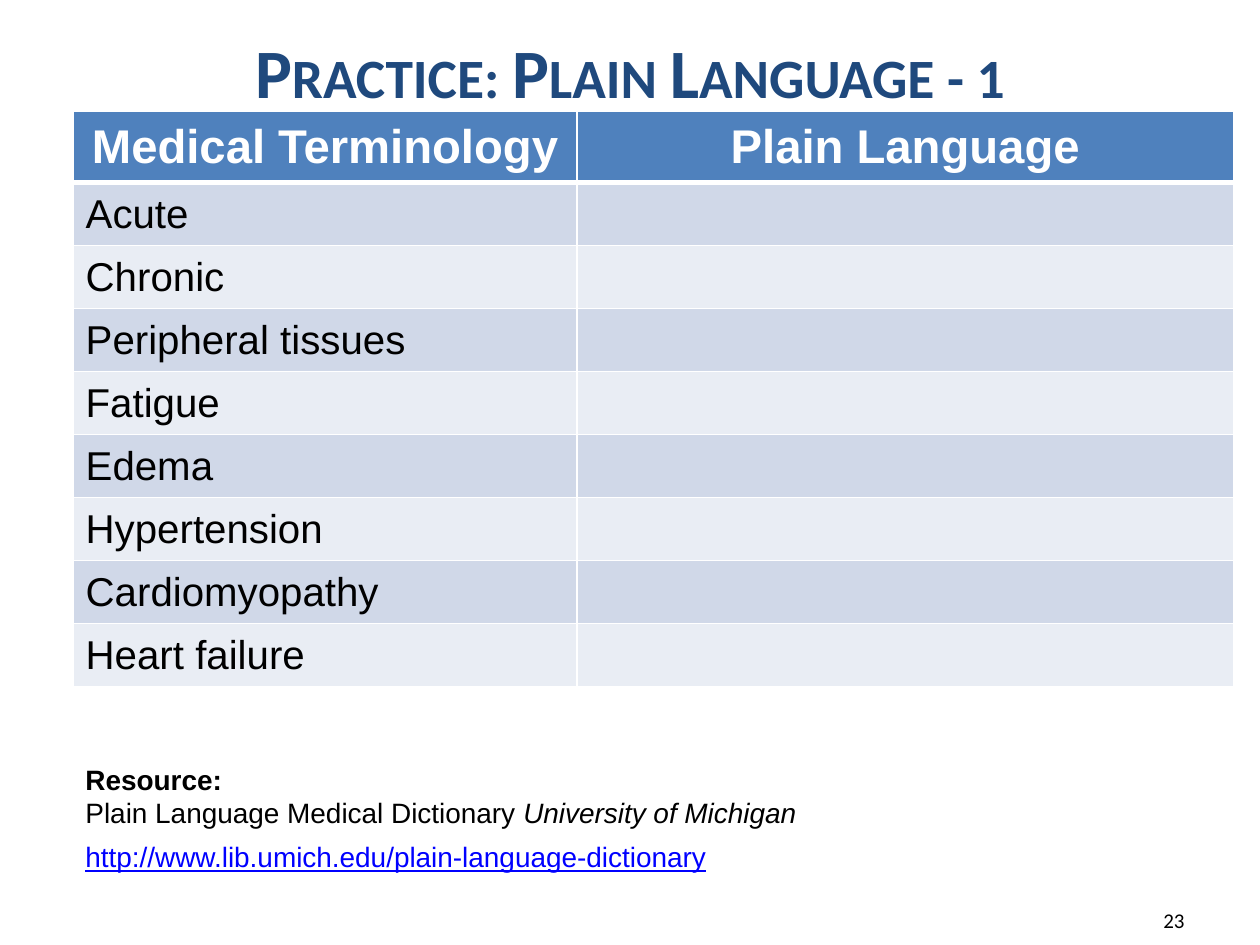
from lxml.etree import SubElement
from pptx import Presentation
from pptx.dml.color import RGBColor
from pptx.enum.text import MSO_ANCHOR as Anchor, PP_ALIGN as Align
from pptx.oxml.ns import qn
from pptx.util import Inches, Pt


def color(value):
    return RGBColor.from_string(value)


def write(paragraph, text, ink, **formats):
    run = paragraph.add_run()
    run.text = text
    run.font.color.rgb = color(ink)
    for key, value in formats.items():
        setattr(run.font, key, value)
    return run


prs = Presentation()
prs.slide_width, prs.slide_height = Inches(10), Inches(7.5)
slide = prs.slides.add_slide(prs.slide_layouts[6])

frames = []
for box, anchor, align in [
    ((0.5, 0.17, 9, 0.78), Anchor.MIDDLE, Align.CENTER),
    ((7.17, 7.1, 2.33, 0.4), Anchor.MIDDLE, Align.RIGHT),
    ((0.58, 6, 7.55, 1.38), Anchor.TOP, Align.LEFT),
]:
    frame = slide.shapes.add_textbox(*map(Inches, box)).text_frame
    frame.word_wrap = True
    frame.vertical_anchor = anchor
    frame.paragraphs[0].alignment = align
    frames.append(frame)
title, page_number, resource = frames

heading = write(title.paragraphs[0], "Practice: Plain Language - 1", "1F497D",
                name="Calibri", size=Pt(39.6), bold=True)
heading.font._element.set("cap", "small")
write(page_number.paragraphs[0], "23", "000000", name="Calibri", size=Pt(12))

terms = ["Acute", "Chronic", "Peripheral tissues", "Fatigue", "Edema",
         "Hypertension", "Cardiomyopathy", "Heart failure"]
rows = [("Medical Terminology", "Plain Language")] + [(term, "") for term in terms]
glossary = slide.shapes.add_table(
    len(rows), 2, Inches(0.58), Inches(0.88), Inches(9.21), Inches(4.57)).table
for column, width in zip(glossary.columns, (4, 5.21)):
    column.width = Inches(width)

for r, texts in enumerate(rows):
    header = r == 0
    glossary.rows[r].height = Inches(0.57 if header else 0.5)
    band = "4F81BD" if header else ("E9EDF4", "D0D8E8")[r % 2]
    for c, text in enumerate(texts):
        cell = glossary.cell(r, c)
        cell.vertical_anchor = Anchor.MIDDLE
        borders = {"L": 1, "R": 1, "T": 3 if r == 1 else 1, "B": 3 if header else 1}
        for side, width in borders.items():
            line = SubElement(cell._tc.get_or_add_tcPr(), qn(f"a:ln{side}"), w=str(Pt(width)))
            SubElement(SubElement(line, qn("a:solidFill")), qn("a:srgbClr"), val="FFFFFF")
        cell.fill.solid()
        cell.fill.fore_color.rgb = color(band)
        if text:
            paragraph = cell.text_frame.paragraphs[0]
            paragraph.alignment = Align.CENTER if header else Align.LEFT
            write(paragraph, text, "FFFFFF" if header else "000000",
                  name="Arial", size=Pt(27 if header else 23), bold=header)

resource_lines = [
    (0, [("Resource:", "000000", {"bold": True})]),
    (6, [("Plain Language Medical Dictionary ", "000000", {}),
         ("University of Michigan", "000000", {"italic": True})]),
    (6, [("http://www.lib.umich.edu/plain-language-dictionary", "0000FF",
          {"underline": True})]),
]
for i, (space_after, pieces) in enumerate(resource_lines):
    paragraph = resource.add_paragraph() if i else resource.paragraphs[0]
    paragraph.space_after = Pt(space_after)
    for text, ink, formats in pieces:
        write(paragraph, text, ink, name="Arial", size=Pt(16), **formats)

prs.save("out.pptx")
